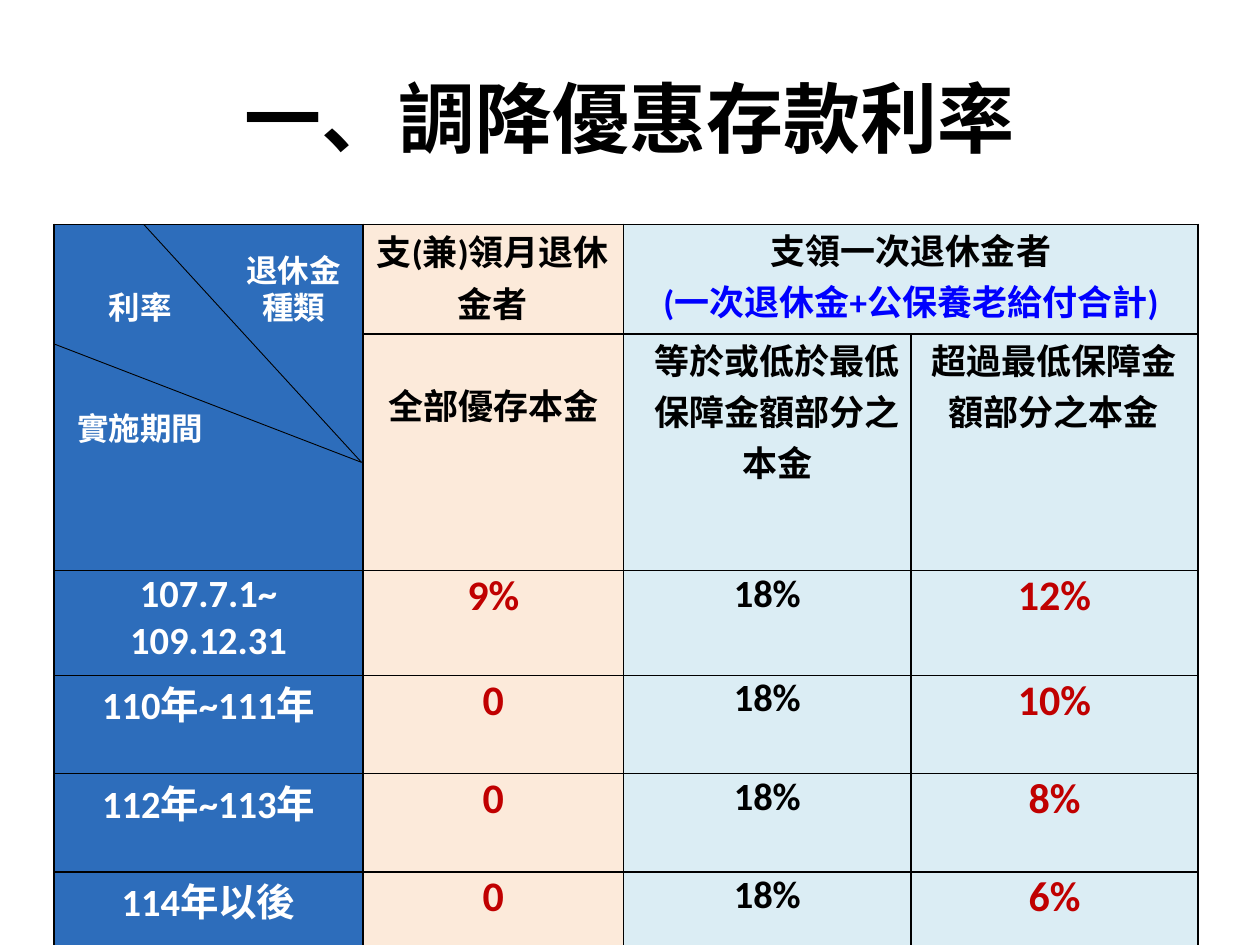
from itertools import groupby
from lxml.etree import SubElement
from pptx import Presentation
from pptx.dml.color import RGBColor
from pptx.enum.shapes import MSO_CONNECTOR
from pptx.enum.text import MSO_ANCHOR, MSO_AUTO_SIZE, PP_ALIGN as ALIGN
from pptx.oxml.ns import qn
from pptx.util import Inches, Pt

CJK, LATIN = "Noto Sans CJK SC", "Calibri"
BLACK, WHITE, RED, LINK = "000000", "FFFFFF", "C00000", "0000FF"
NAVY, PEACH, SKY = "2D6DBB", "FCEADA", "DBEDF4"

TITLE = "一、調降優惠存款利率"
COLUMNS = [2.45, 2.07, 2.28, 2.28]
ROWS = [0.87, 1.88, 0.83, 0.78, 0.78, 0.78]
FILLS = [NAVY, PEACH, SKY, SKY]
LEFT, TOP = 0.43, 1.78
HEADERS = [
    (0, 1, ["支(兼)領月退休 金者"], dict(align=ALIGN.LEFT, indent=(0.75, -0.64), leading=1.02)),
    (0, 2, ["支領一次退休金者", "(一次退休金+公保養老給付合計)"], {}),
    (1, 1, ["全部優存本金"], dict(top=0.36)),
    (1, 2, ["等於或低於最低 保障金額部分之 本金"], dict(indent=(0.16, 0))),
    (1, 3, ["超過最低保障金 額部分之本金"], dict(align=ALIGN.LEFT, indent=(0.3, -0.14))),
]
RATES = [
    (["107.7.1~", "109.12.31"], "9%", "18%", "12%"),
    (["110年~111年"], "0", "18%", "10%"),
    (["112年~113年"], "0", "18%", "8%"),
    (["114年以後"], "0", "18%", "6%"),
]
DIAGONALS = [(1.14, 1.78), (0.43, 2.73)]
CORNER = (2.87, 3.67)
LABELS = [
    (["利率"], (0.76, 2.24, 0.71, 0.4)),
    (["實施期間"], (0.51, 3.2, 1.21, 0.4)),
    (["退休金", "種類"], (1.85, 1.94, 0.96, 0.71)),
]


def rgb(color):
    return RGBColor.from_string(color)


def style(span, size, color, font):
    span.font.size, span.font.bold, span.font.name = Pt(size), True, font
    span.font.color.rgb = rgb(color)
    latin = span.font._element.find(qn("a:latin"))
    east = latin.makeelement(qn("a:ea"), {"typeface": font})
    latin.addnext(east)


def is_cjk(char):
    return char == " " or ord(char) > 0x2E00


def write(frame, lines, size, colors, align=ALIGN.CENTER, indent=(0, 0), leading=None):
    frame.text = "\n".join(lines)
    for para, line, color in zip(frame.paragraphs, lines, colors):
        para.text = ""
        para.alignment = align
        para.line_spacing = leading
        if any(indent):
            props = para._p.get_or_add_pPr()
            props.set("marL", str(Inches(indent[0])))
            props.set("indent", str(Inches(indent[1])))
        for cjk, chars in groupby(line, is_cjk):
            span = para.add_run()
            span.text = "".join(chars)
            style(span, size, color, CJK if cjk else LATIN)


def dress(cell, fill):
    cell.margin_left = cell.margin_right = cell.margin_top = cell.margin_bottom = 0
    props = cell._tc.get_or_add_tcPr()
    for side in ("lnL", "lnR", "lnT", "lnB"):
        border = SubElement(props, qn("a:" + side), w=str(Pt(1)))
        SubElement(SubElement(border, qn("a:solidFill")), qn("a:srgbClr"), val=BLACK)
    cell.fill.solid()
    cell.fill.fore_color.rgb = rgb(fill)


def add_rates(page):
    table = page.shapes.add_table(
        len(ROWS), len(COLUMNS), Inches(LEFT), Inches(TOP),
        Inches(sum(COLUMNS)), Inches(sum(ROWS))).table
    for column, width in zip(table.columns, COLUMNS):
        column.width = Inches(width)
    for row, height in zip(table.rows, ROWS):
        row.height = Inches(height)
        for cell, fill in zip(row.cells, FILLS):
            dress(cell, fill)
    table.cell(0, 0).merge(table.cell(1, 0))
    table.cell(0, 2).merge(table.cell(0, 3))
    for row, column, lines, options in HEADERS:
        cell = table.cell(row, column)
        cell.margin_top = Inches(options.get("top", 0))
        layout = {key: value for key, value in options.items() if key != "top"}
        write(cell.text_frame, lines, 20, [BLACK, LINK], **layout)
    for row, (period, monthly, base, excess) in enumerate(RATES, 2):
        entries = [(period, 22, WHITE), ([monthly], 24, RED), ([base], 22, BLACK), ([excess], 24, RED)]
        for column, (lines, size, color) in enumerate(entries):
            write(table.cell(row, column).text_frame, lines, size, [color] * len(lines))


def add_diagonal(page, start):
    line = page.shapes.add_connector(
        MSO_CONNECTOR.STRAIGHT, *(Inches(value) for value in start + CORNER))
    line.line.color.rgb = rgb(BLACK)
    line.line.width = Pt(0.5)
    SubElement(line._element.spPr, qn("a:effectLst"))


def add_label(page, lines, place):
    box = page.shapes.add_textbox(*(Inches(value) for value in place))
    box.text_frame.word_wrap = False
    box.text_frame.auto_size = MSO_AUTO_SIZE.SHAPE_TO_FIT_TEXT
    write(box.text_frame, lines, 18, [WHITE] * len(lines))


def main():
    deck = Presentation()
    deck.slide_width, deck.slide_height = Inches(10), Inches(7.5)
    page = deck.slides.add_slide(deck.slide_layouts[5])
    title = page.shapes.title
    title.left, title.top, title.width, title.height = (
        Inches(value) for value in (0.5, 0.3, 9, 1.25))
    title.text_frame.text = TITLE
    title.text_frame.vertical_anchor = MSO_ANCHOR.MIDDLE
    title.text_frame.paragraphs[0].alignment = ALIGN.CENTER
    style(title.text_frame.paragraphs[0].runs[0], 44, BLACK, "Arial")
    add_rates(page)
    for start in DIAGONALS:
        add_diagonal(page, start)
    for lines, place in LABELS:
        add_label(page, lines, place)
    deck.save("out.pptx")


if __name__ == "__main__":
    main()
